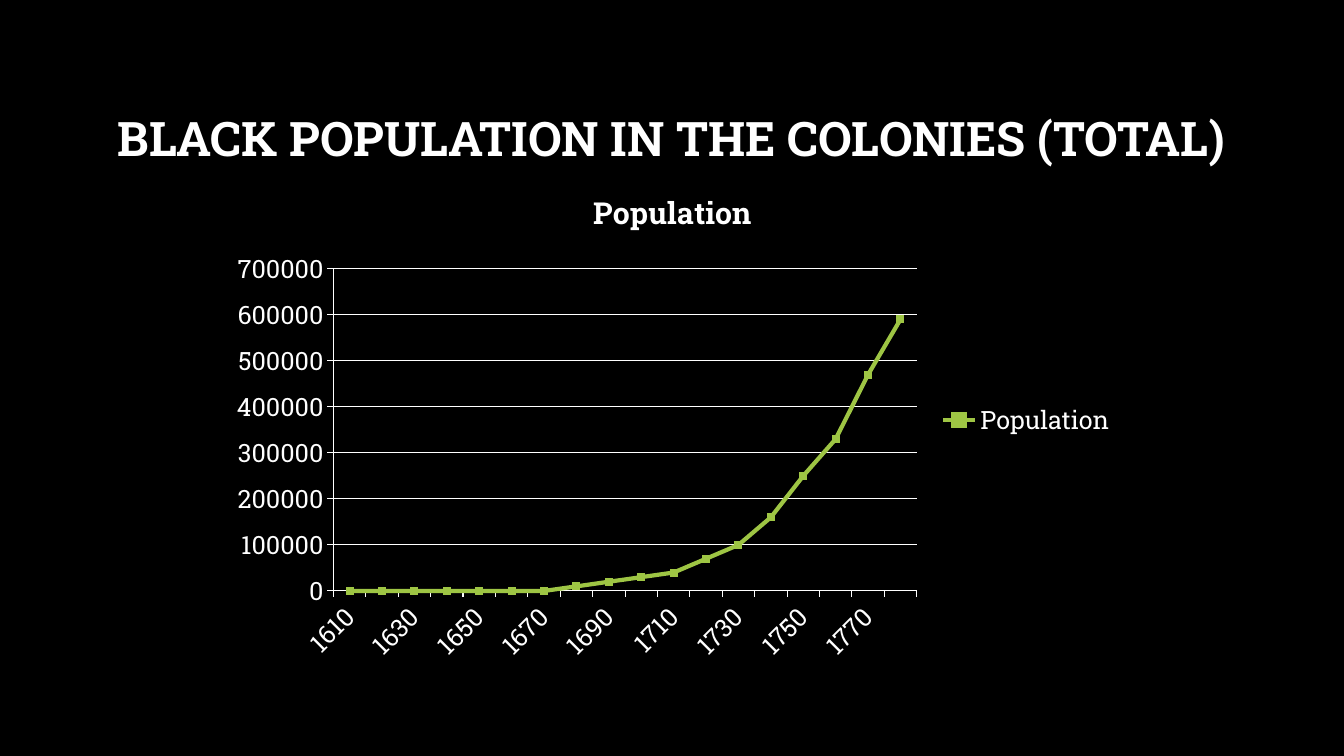
from dataclasses import dataclass

from pptx import Presentation
from pptx.chart.data import CategoryChartData
from pptx.dml.color import RGBColor
from pptx.enum.chart import XL_CHART_TYPE, XL_LEGEND_POSITION, XL_MARKER_STYLE, XL_TICK_MARK
from pptx.enum.text import MSO_ANCHOR, PP_ALIGN
from pptx.util import Inches, Pt


@dataclass(frozen=True)
class Theme:
    font: str = "Roboto Slab"
    background: RGBColor = RGBColor(0x00, 0x00, 0x00)
    text: RGBColor = RGBColor(0xFF, 0xFF, 0xFF)
    accent: RGBColor = RGBColor(0x9E, 0xC5, 0x44)
    title_size: Pt = Pt(34)
    chart_title_size: Pt = Pt(21.6)
    chart_size: Pt = Pt(18)


theme = Theme()


def style_font(font, size, bold=False):
    font.name = theme.font
    font.size = size
    font.bold = bold
    font.color.rgb = theme.text


deck = Presentation()
deck.slide_width = Inches(13.33)
deck.slide_height = Inches(7.5)
page = deck.slides.add_slide(deck.slide_layouts[5])
page.background.fill.solid()
page.background.fill.fore_color.rgb = theme.background

# Population by decade
population = [0, 0, 0, 0, 0, 0, 0, 10000, 20000, 30000, 40000, 70000,
              100000, 160000, 250000, 330000, 470000, 590000]
data = CategoryChartData()
data.categories = [str(year) for year in range(1610, 1790, 10)]
data.add_series("Population", population)
chart = page.shapes.add_chart(
    XL_CHART_TYPE.LINE_MARKERS,
    Inches(2.17), Inches(1.67), Inches(9), Inches(5), data,
).chart
style_font(chart.font, theme.chart_size)

chart.has_title = True
para = chart.chart_title.text_frame.paragraphs[0]
span = para.add_run()
span.text = "Population"
style_font(span.font, theme.chart_title_size, bold=True)
chart.chart_title.include_in_layout = False

chart.has_legend = True
chart.legend.position = XL_LEGEND_POSITION.RIGHT
chart.legend.include_in_layout = False

# Axes
for axis in (chart.category_axis, chart.value_axis):
    axis.major_tick_mark = XL_TICK_MARK.OUTSIDE
    axis.minor_tick_mark = XL_TICK_MARK.NONE
    axis.format.line.color.rgb = theme.text
    axis.format.line.width = Pt(0.75)
    style_font(axis.tick_labels.font, theme.chart_size)
chart.category_axis.has_major_gridlines = False
label_body = chart.category_axis._element.txPr.bodyPr
label_body.set("rot", "-2700000")
label_body.set("vert", "horz")

value_axis = chart.value_axis
value_axis.minimum_scale = 0
value_axis.maximum_scale = 700000
value_axis.major_unit = 100000
value_axis.has_major_gridlines = True
value_axis.major_gridlines.format.line.color.rgb = theme.text
value_axis.major_gridlines.format.line.width = Pt(0.75)
value_axis.tick_labels.number_format = "General"
value_axis.tick_labels.number_format_is_linked = False

# Line and markers
chart.plots[0].vary_by_categories = False
line = chart.plots[0].series[0]
line.smooth = False
line.format.line.color.rgb = theme.accent
line.format.line.width = Pt(3)
line.marker.style = XL_MARKER_STYLE.SQUARE
line.marker.size = 5
line.marker.format.fill.solid()
line.marker.format.fill.fore_color.rgb = theme.accent
line.marker.format.line.color.rgb = theme.accent

# Title
title = page.shapes.title
title.left, title.top = Inches(1), Inches(0.67)
title.width, title.height = Inches(11.32), Inches(1.45)
title.text_frame.word_wrap = True
title.text_frame.vertical_anchor = MSO_ANCHOR.MIDDLE
para = title.text_frame.paragraphs[0]
para.alignment = PP_ALIGN.CENTER
para.line_spacing = 0.9
span = para.add_run()
span.text = "BLACK POPULATION IN THE COLONIES (TOTAL)"
style_font(span.font, theme.title_size, bold=True)

deck.save("out.pptx")
